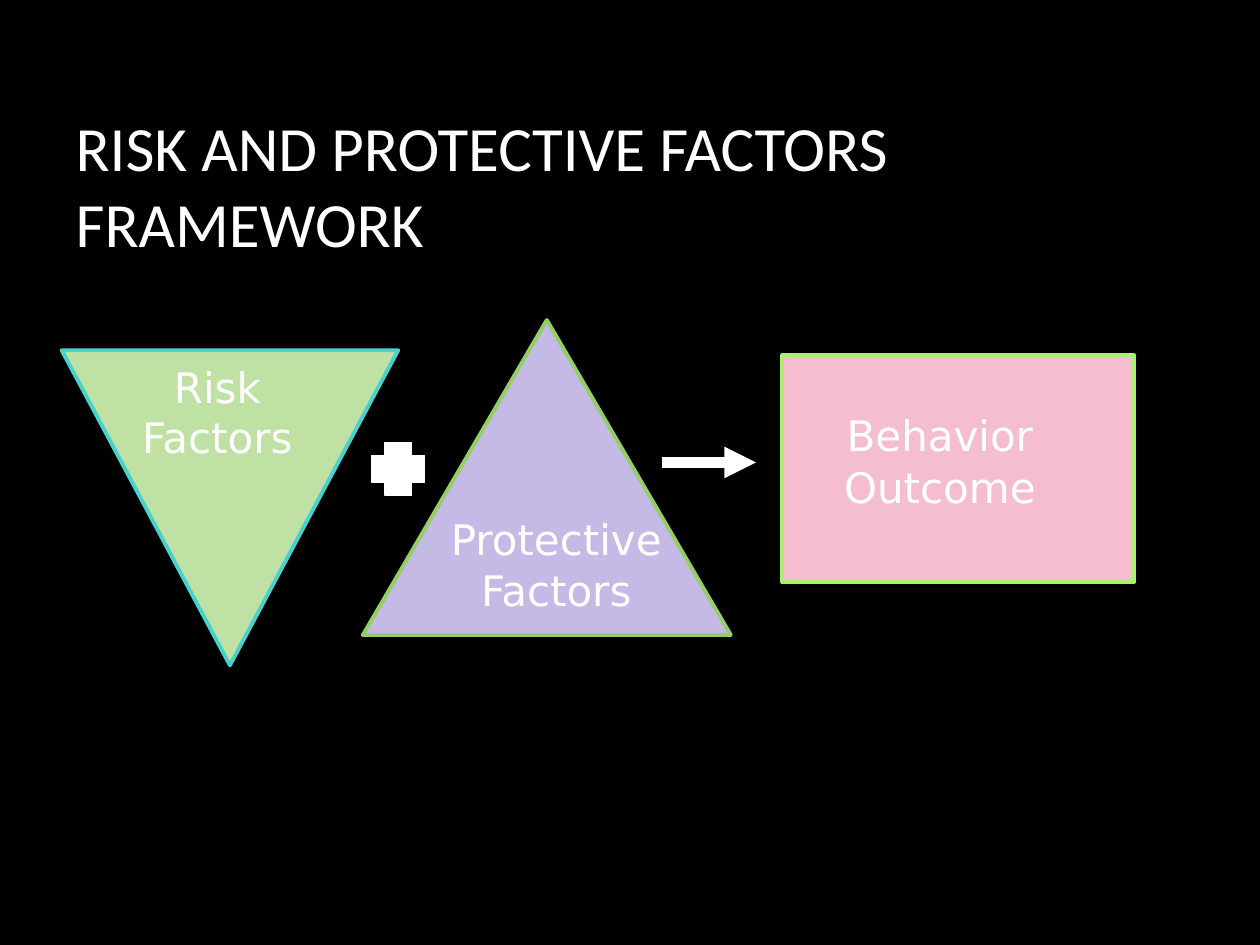
from dataclasses import dataclass

from lxml import etree
from pptx import Presentation
from pptx.dml.color import RGBColor
from pptx.enum.shapes import MSO_CONNECTOR, MSO_SHAPE
from pptx.enum.text import MSO_ANCHOR, MSO_AUTO_SIZE, PP_ALIGN
from pptx.oxml.ns import qn
from pptx.util import Inches, Pt

WHITE = "FFFFFF"
PINK = "F4BED0"


@dataclass
class Box:
    left: float
    top: float
    width: float
    height: float

    def lengths(self):
        return [Inches(v) for v in (self.left, self.top, self.width, self.height)]


@dataclass
class Figure:
    kind: MSO_SHAPE
    box: Box
    fill: str
    line: str | None = None
    line_width: float = 2.25
    rotation: float = 0


@dataclass
class Label:
    text: str
    box: Box
    space_after: float = 0


def rgb(value: str) -> RGBColor:
    return RGBColor.from_string(value)


def write(sp, text: str, *, size: float, font: str, color: str = WHITE,
          align=PP_ALIGN.CENTER, anchor=MSO_ANCHOR.TOP, space_after: float = 0,
          auto_size=MSO_AUTO_SIZE.SHAPE_TO_FIT_TEXT) -> None:
    tf = sp.text_frame
    tf.word_wrap = True
    tf.auto_size = auto_size
    tf.vertical_anchor = anchor
    tf.text = text
    for p in tf.paragraphs:
        p.alignment = align
        p.space_after = Pt(space_after)
        for r in p.runs:
            r.font.size = Pt(size)
            r.font.name = font
            r.font.color.rgb = rgb(color)


def draw_figure(s, figure: Figure) -> None:
    sp = s.shapes.add_shape(figure.kind, *figure.box.lengths())
    sp.shadow.inherit = False
    sp.rotation = figure.rotation
    sp.fill.solid()
    sp.fill.fore_color.rgb = rgb(figure.fill)
    if figure.line:
        sp.line.color.rgb = rgb(figure.line)
        sp.line.width = Pt(figure.line_width)
    else:
        sp.line.fill.background()


def draw_label(s, label: Label) -> None:
    sp = s.shapes.add_textbox(*label.box.lengths())
    write(sp, label.text, size=24, font="DejaVu Sans", space_after=label.space_after)


def draw_arrow(s, x1: float, x2: float, y: float) -> None:
    line = s.shapes.add_connector(MSO_CONNECTOR.STRAIGHT, Inches(x1), Inches(y),
                                  Inches(x2), Inches(y))
    line.line.color.rgb = rgb(WHITE)
    line.line.width = Pt(6)
    etree.SubElement(line.line._get_or_add_ln(), qn("a:tailEnd"), type="triangle")
    etree.SubElement(line._element.spPr, qn("a:effectLst"))


FIGURES = [
    Figure(MSO_SHAPE.ISOSCELES_TRIANGLE, Box(2.88, 2.54, 2.92, 2.5), "C4BAE5", "94CE67"),
    Figure(MSO_SHAPE.RECTANGLE, Box(6.21, 2.82, 2.79, 1.8), PINK, "AAF172"),
    Figure(MSO_SHAPE.ISOSCELES_TRIANGLE, Box(0.49, 2.78, 2.67, 2.5), "BFE2A4", "49D1CD",
           rotation=180),
    Figure(MSO_SHAPE.CROSS, Box(2.95, 3.51, 0.42, 0.42), WHITE, WHITE, 0.75),
]

LABELS = [
    Label("Risk Factors", Box(0.83, 2.82, 1.79, 0.91)),
    Label("Protective Factors", Box(3.25, 4.03, 2.33, 0.91)),
    Label("Behavior\nOutcome", Box(6.48, 3.2, 1.96, 0.93), space_after=1.2),
]


def main() -> None:
    prs = Presentation()
    prs.slide_width, prs.slide_height = Inches(10), Inches(7.5)
    s = prs.slides.add_slide(prs.slide_layouts[5])
    s.background.fill.solid()
    s.background.fill.fore_color.rgb = rgb("000000")

    # Title
    title = s.shapes.title
    title.left, title.top, title.width, title.height = Box(0.5, 0.67, 8.5, 1.59).lengths()
    write(title, "RISK AND PROTECTIVE FACTORS FRAMEWORK", size=36, font="Calibri",
          align=PP_ALIGN.LEFT, anchor=MSO_ANCHOR.MIDDLE, auto_size=MSO_AUTO_SIZE.NONE)

    # Risk plus protection leads to behavior
    for figure in FIGURES:
        draw_figure(s, figure)
    for label in LABELS:
        draw_label(s, label)
    draw_arrow(s, 5.25, 6, 3.67)

    prs.save("out.pptx")


if __name__ == "__main__":
    main()
